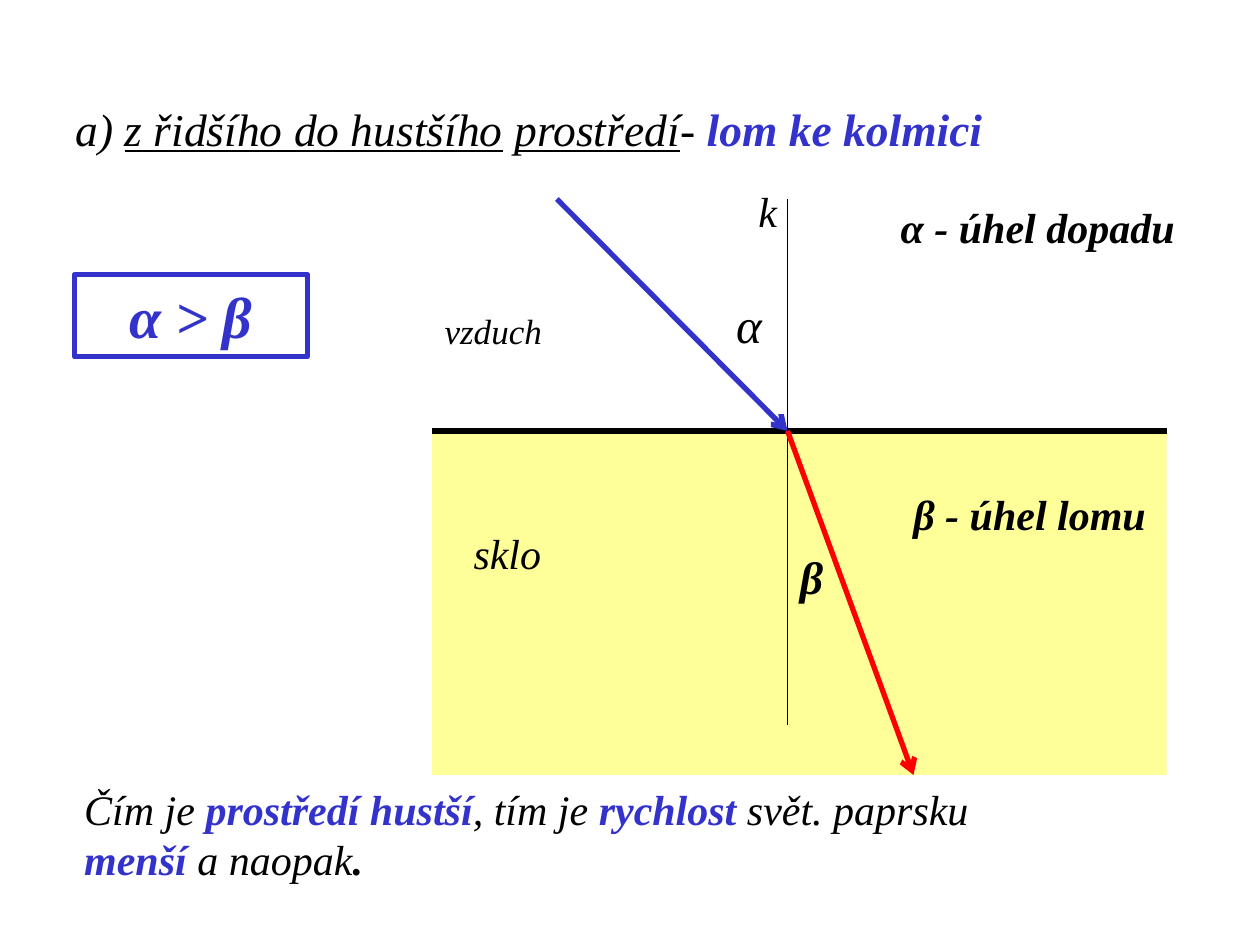
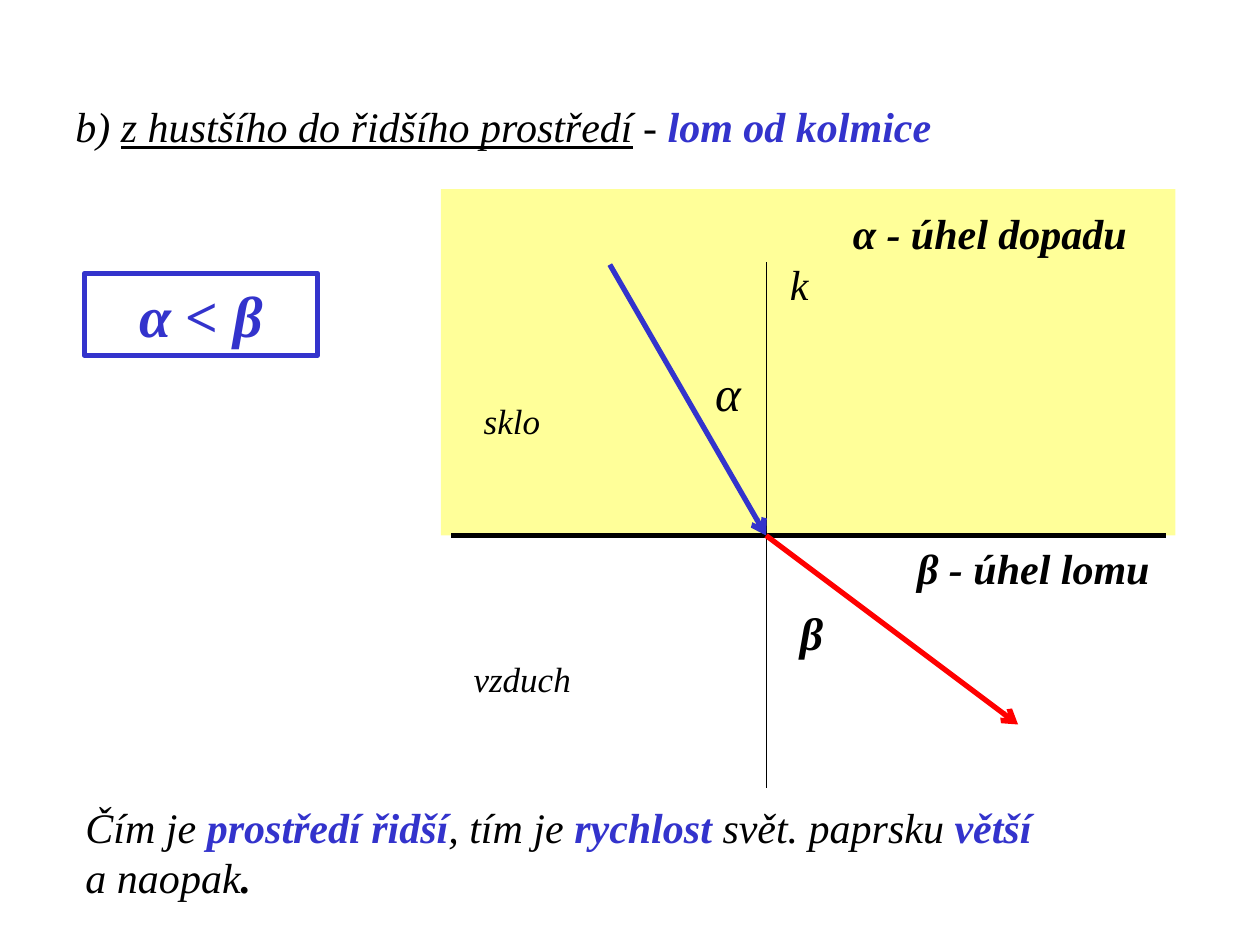
"""Build two slides on the refraction of light between air and glass."""
from lxml import etree
from pptx import Presentation
from pptx.dml.color import RGBColor
from pptx.enum.shapes import MSO_CONNECTOR, MSO_SHAPE
from pptx.enum.text import PP_ALIGN
from pptx.oxml.ns import qn
from pptx.util import Inches, Pt

RECT = MSO_SHAPE.RECTANGLE
LINE = MSO_CONNECTOR.STRAIGHT
LEFT, CENTER = PP_ALIGN.LEFT, PP_ALIGN.CENTER
FONT = "Times New Roman"
BLACK, BLUE, RED, GLASS = "000000", "3333CC", "FF0000", "FFFF99"
STYLES = {
    "plain": {"bold": False},
    "under": {"bold": False, "underline": True},
    "bold": {"bold": True},
    "blue": {"bold": True},
}


def color(code):
    return RGBColor.from_string(code)


def write(shape, size, lines, align=LEFT):
    frame = shape.text_frame
    frame.word_wrap = True
    for row, runs in enumerate(lines):
        para = frame.paragraphs[0] if row == 0 else frame.add_paragraph()
        para.alignment = align
        for text, style in runs:
            run = para.add_run()
            run.text = text
            look = {"name": FONT, "size": Pt(size), "italic": True, **STYLES[style]}
            for key, value in look.items():
                setattr(run.font, key, value)
            run.font.color.rgb = color(BLUE if style == "blue" else BLACK)


slides = [
    {
        "glass": (3.43, 3.4),
        "hit": (6.25, 3.42),
        "edge": (3.43, 9.26),
        "normal": (1.58, 5.75),
        "source": (4.42, 1.58),
        "exit": (7.25, 6.15),
        "rule": (0.59, 2.18, "α > β"),
        "texts": [
            (0.5, 0.75, 8.52, 0.54, 26, [[
                ("a) ", "plain"), ("z řidšího do hustšího", "under"), (" ", "plain"),
                ("prostředí", "under"), ("- ", "plain"), ("lom ke kolmici", "blue")]]),
            (5.75, 2.29, 0.5, 0.57, 28, [[("α", "plain")]]),
            (5.92, 1.42, 0.37, 0.5, 24, [[("k", "plain")]]),
            (6.25, 4.31, 0.48, 0.54, 26, [[("β", "bold")]]),
            (0.57, 6.17, 7.96, 0.9, 24, [[
                ("Čím je ", "plain"), ("prostředí hustší", "blue"), (", tím je ", "plain"),
                ("rychlost ", "blue"), ("svět. paprsku ", "plain"), ("menší ", "blue"),
                ("a naopak", "plain"), (".", "bold")]]),
            (7.15, 3.83, 2.07, 0.5, 24, [[("β - úhel lomu", "bold")]]),
            (7.05, 1.55, 2.43, 0.5, 24, [[("α - úhel dopadu", "bold")]]),
            (3.66, 4.14, 1.81, 0.51, 24, [[("sklo", "plain")]]),
            (3.43, 2.41, 1.81, 0.44, 20, [[("vzduch", "plain")]]),
        ],
    },
    {
        "glass": (3.5, 1.5),
        "hit": (6.08, 4.25),
        "edge": (3.58, 9.25),
        "normal": (2.08, 6.25),
        "source": (4.84, 2.1),
        "exit": (8.08, 5.75),
        "rule": (0.67, 2.17, "α < β"),
        "texts": [
            (0.5, 0.75, 7.08, 0.5, 24, [[
                ("b) ", "plain"), ("z hustšího do řidšího prostředí", "under"),
                (" - ", "plain"), ("lom od kolmice", "blue")]]),
            (5.58, 2.83, 0.5, 0.57, 28, [[("α", "plain")]]),
            (6.17, 2, 0.42, 0.5, 24, [[("k", "plain")]]),
            (6.25, 4.75, 0.42, 0.54, 26, [[("β", "bold")]]),
            (0.58, 6.31, 9.59, 0.9, 24, [
                [("Čím je ", "plain"), ("prostředí řidší", "blue"), (", tím je ", "plain"),
                 ("rychlost ", "blue"), ("svět. paprsku ", "plain"), ("větší", "blue")],
                [("a naopak", "plain"), (".", "bold")]]),
            (6.67, 1.6, 2.67, 0.5, 24, [[("α - úhel dopadu", "bold")]]),
            (7.18, 4.26, 2.07, 0.5, 24, [[("β - úhel lomu", "bold")]]),
            (3.66, 5.17, 1.81, 0.44, 20, [[("vzduch", "plain")]]),
            (3.74, 3.12, 1.18, 0.44, 20, [[("sklo", "plain")]]),
        ],
    },
]

deck = Presentation()
deck.slide_width, deck.slide_height = Inches(10), Inches(7.5)

for data in slides:
    shapes = deck.slides.add_slide(deck.slide_layouts[6]).shapes

    left, top = data["glass"]
    glass = shapes.add_shape(RECT, Inches(left), Inches(top), Inches(5.83), Inches(2.75))
    glass.shadow.inherit = False
    glass.fill.solid()
    glass.fill.fore_color.rgb = color(GLASS)
    glass.line.fill.background()

    hit = data["hit"]
    start, end = data["edge"]
    high, low = data["normal"]
    rays = [
        ((start, hit[1]), (end, hit[1]), BLACK, 3, False),
        ((hit[0], high), (hit[0], low), BLACK, 0.25, False),
        (data["source"], hit, BLUE, 3, True),
        (hit, data["exit"], RED, 3, True),
    ]
    for tail, head, tint, width, arrow in rays:
        ray = shapes.add_connector(LINE, *[Inches(n) for n in tail + head])
        ray.line.color.rgb = color(tint)
        ray.line.width = Pt(width)
        if arrow:
            etree.SubElement(ray.line._get_or_add_ln(), qn("a:tailEnd"), type="arrow")
        etree.SubElement(ray._element.spPr, qn("a:effectLst"))

    left, top, text = data["rule"]
    rule = shapes.add_shape(RECT, Inches(left), Inches(top), Inches(1.85), Inches(0.65))
    rule.shadow.inherit = False
    rule.fill.background()
    rule.line.color.rgb = color(BLUE)
    rule.line.width = Pt(3)
    write(rule, 33, [[(text, "blue")]], CENTER)

    for *place, size, lines in data["texts"]:
        box = shapes.add_textbox(*[Inches(n) for n in place])
        write(box, size, lines)

deck.save("out.pptx")
